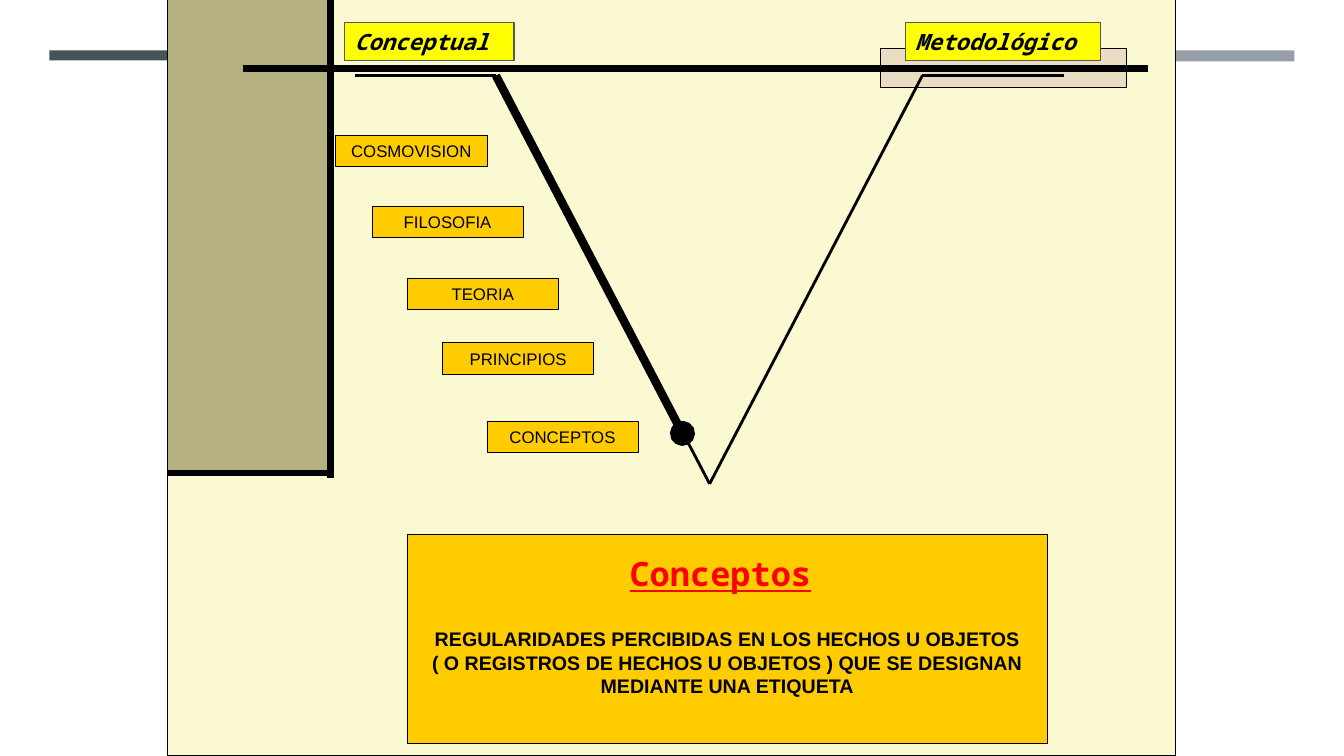
import lxml.etree
import pptx
import pptx.dml.color
import pptx.enum.shapes
import pptx.enum.text
import pptx.oxml.ns
import pptx.util

Pt = pptx.util.Pt
Inches = pptx.util.Inches
ANCHOR = pptx.enum.text.MSO_ANCHOR
ALIGN = pptx.enum.text.PP_ALIGN
RECTANGLE = pptx.enum.shapes.MSO_SHAPE.RECTANGLE
STRAIGHT = pptx.enum.shapes.MSO_CONNECTOR.STRAIGHT

COLORS = {
    name: pptx.dml.color.RGBColor.from_string(value)
    for name, value in {
        "slate": "465359", "silver": "969FA7", "cream": "FAF9D2",
        "olive": "B4B082", "sand": "EBDDC3", "yellow": "FFFF00",
        "amber": "FFCC00", "gray": "585753", "red": "FF0000",
        "black": "000000",
    }.items()
}
THEME = {
    "side": {"name": "Noto Sans Mono", "size": Pt(16), "bold": True, "italic": True},
    "level": {"name": "Arial", "size": Pt(12)},
    "title": {"name": "Noto Sans Mono", "size": Pt(24), "bold": True, "underline": True},
    "definition": {"name": "Arial", "size": Pt(14), "bold": True},
    "frame": 4.5, "vee": 2, "accent": 6, "outline": 0.75, "thin": 0.5,
}

presentation = pptx.Presentation()
presentation.slide_width = Inches(13.33)
presentation.slide_height = Inches(7.5)
slide = presentation.slides.add_slide(presentation.slide_layouts[1])


def share(across, down):
    """Turn percentages of the slide's width and height into lengths."""
    return (int(presentation.slide_width * across / 100),
            int(presentation.slide_height * down / 100))


def write(shape, text, font, color="black", align=ALIGN.CENTER,
          anchor=ANCHOR.MIDDLE, side_inset=0.1, top_inset=0.05):
    frame = shape.text_frame
    frame_format = {
        "word_wrap": True, "auto_size": pptx.enum.text.MSO_AUTO_SIZE.NONE,
        "vertical_anchor": anchor, "text": text,
        "margin_left": Inches(side_inset), "margin_right": Inches(side_inset),
        "margin_top": Inches(top_inset), "margin_bottom": Inches(0.05),
    }
    for key, value in frame_format.items():
        setattr(frame, key, value)
    paragraph = frame.paragraphs[0]
    paragraph.alignment = align
    paragraph.space_before = Pt(0)
    run_font = paragraph.runs[0].font
    for key, value in THEME[font].items():
        setattr(run_font, key, value)
    run_font.color.rgb = COLORS[color]


# Panels and labelled boxes: left, top, width, height, fill, line, line width, text, font
boxes = [
    (3.68, 6.67, 30.38, 1.33, "slate", None, None, None, None),
    (65.94, 6.67, 30.38, 1.47, "silver", None, None, None, None),
    (12.5, 0, 75, 100, "cream", "black", "outline", None, None),
    (12.5, 0, 12.08, 62.53, "olive", "black", "outline", None, None),
    (65.55, 6.4, 18.3, 5.2, "sand", "black", "outline", None, None),
    (25.65, 2.93, 12.6, 5.07, "yellow", "gray", "outline", "Conceptual", "side"),
    (67.35, 2.93, 14.55, 5.07, "yellow", "gray", "outline", "Metodológico", "side"),
]
levels = [
    ("COSMOVISION", 24.98, 17.87),
    ("FILOSOFIA", 27.68, 27.33),
    ("TEORIA", 30.3, 36.8),
    ("PRINCIPIOS", 32.93, 45.33),
    ("CONCEPTOS", 36.23, 55.73),
]
for text, left, top in levels:
    boxes.append((left, top, 11.25, 4.13, "amber", "black", "thin", text, "level"))

for left, top, width, height, fill, line, line_width, text, font in boxes:
    box = slide.shapes.add_shape(RECTANGLE, *share(left, top), *share(width, height))
    box.shadow.inherit = False
    box.fill.solid()
    box.fill.fore_color.rgb = COLORS[fill]
    if line:
        box.line.color.rgb = COLORS[line]
        box.line.width = Pt(THEME[line_width])
    else:
        box.line.fill.background()
    if text:
        write(box, text, font, align=ALIGN.LEFT if font == "side" else ALIGN.CENTER)

# Frame lines and the two arms of the V, which meet at its tip
left_arm, right_arm, tip = (36.9, 10), (68.63, 10), (52.8, 64)
lines = [
    ((12.5, 62.53), (24.6, 62.53), "frame"),
    ((18.08, 9.07), (85.43, 9.07), "frame"),
    ((24.6, 63.2), (24.6, 0), "frame"),
    ((26.4, 10), left_arm, "vee"),
    (right_arm, (79.2, 10), "vee"),
    (left_arm, tip, "vee"),
    (right_arm, tip, "vee"),
    (left_arm, (50.78, 57.33), "accent"),
]
for start, end, weight in lines:
    connector = slide.shapes.add_connector(STRAIGHT, *share(*start), *share(*end))
    connector.line.color.rgb = COLORS["black"]
    connector.line.width = Pt(THEME[weight])
    if weight == "accent":
        lxml.etree.SubElement(connector.line._get_or_add_ln(),
                              pptx.oxml.ns.qn("a:tailEnd"), type="oval")
    lxml.etree.SubElement(connector.element.spPr, pptx.oxml.ns.qn("a:effectLst"))

# Definition and its title, brought in front of the panels
title = slide.shapes.title
definition = slide.placeholders[1]
for placeholder, corner, size in [
    (definition, (30.3, 70.67), (47.63, 27.6)),
    (title, (28.28, 71.6), (50.63, 8.53)),
]:
    placeholder.left, placeholder.top = share(*corner)
    placeholder.width, placeholder.height = share(*size)
    placeholder.element.getparent().append(placeholder.element)

definition.fill.solid()
definition.fill.fore_color.rgb = COLORS["amber"]
definition.line.color.rgb = COLORS["black"]
definition.line.width = Pt(THEME["thin"])
write(definition,
      "REGULARIDADES PERCIBIDAS EN LOS HECHOS U OBJETOS "
      "( O REGISTROS DE HECHOS U OBJETOS ) QUE SE DESIGNAN MEDIANTE UNA ETIQUETA",
      "definition", anchor=ANCHOR.TOP, side_inset=0.22, top_inset=0.92)
properties = definition.text_frame.paragraphs[0]._p.get_or_add_pPr()
properties.set("marL", "0")
properties.set("indent", "0")
lxml.etree.SubElement(properties, pptx.oxml.ns.qn("a:buNone"))
write(title, "Conceptos", "title", color="red")

presentation.save("out.pptx")
